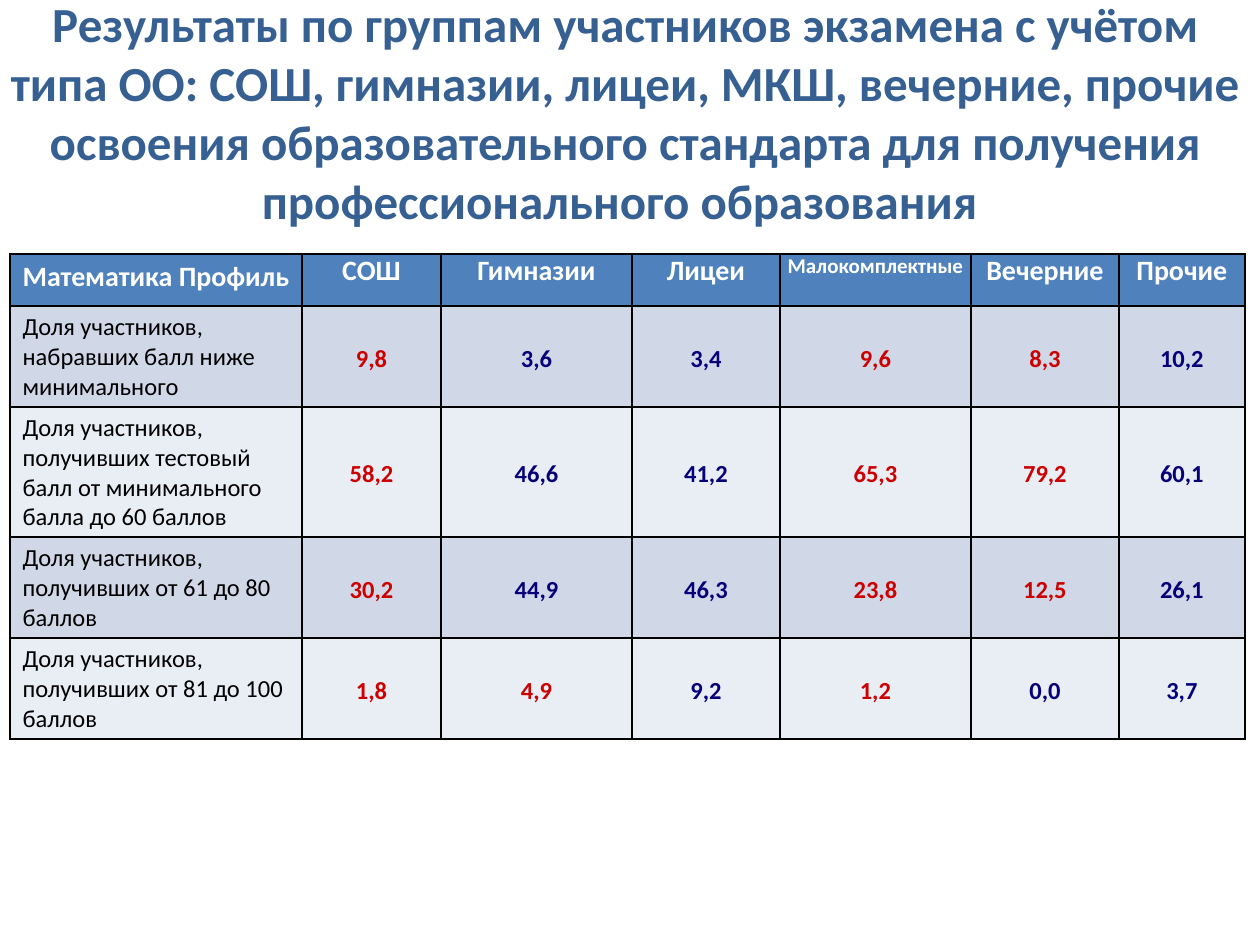
import pptx
import pptx.util
import pptx.dml.color
import pptx.enum.text
import pptx.oxml
import pptx.oxml.ns
from dataclasses import dataclass


@dataclass(frozen=True)
class Theme:
    font: str = "Calibri"
    title: str = "376092"
    header: str = "4F81BD"
    bands: tuple = ("D0D8E8", "E9EDF4")
    white: str = "FFFFFF"
    black: str = "000000"
    red: str = "CC0000"
    blue: str = "070179"
    title_size: int = 28
    header_size: int = 16
    small_size: int = 12
    body_size: int = 14


theme = Theme()
PX = 914400 // 126
ALIGN = pptx.enum.text.PP_ALIGN
MIDDLE = pptx.enum.text.MSO_ANCHOR.MIDDLE


def add_run(p, text, size, color, bold=True):
    r = p.add_run()
    r.text = text
    r.font.name = theme.font
    r.font.size = pptx.util.Pt(size)
    r.font.bold = bold
    r.font.color.rgb = pptx.dml.color.RGBColor.from_string(color)


def style_cell(cell, fill, side=None):
    if side is not None:
        cell.margin_left = cell.margin_right = side * PX
        cell.margin_top = cell.margin_bottom = 0
    pr = cell._tc.get_or_add_tcPr()
    for edge in ("lnL", "lnR", "lnT", "lnB"):
        pr.append(pptx.oxml.parse_xml(
            f'<a:{edge} {pptx.oxml.ns.nsdecls("a")} w="12700"><a:solidFill>'
            f'<a:srgbClr val="{theme.black}"/></a:solidFill></a:{edge}>'))
    cell.fill.solid()
    cell.fill.fore_color.rgb = pptx.dml.color.RGBColor.from_string(fill)


prs = pptx.Presentation()
prs.slide_width, prs.slide_height = 1260 * PX, 945 * PX
s = prs.slides.add_slide(prs.slide_layouts[5])

title = s.shapes.title
title.left, title.top, title.width, title.height = -5 * PX, -14 * PX, 1260 * PX, 251 * PX
tf = title.text_frame
tf.word_wrap = True
tf.auto_size = pptx.enum.text.MSO_AUTO_SIZE.SHAPE_TO_FIT_TEXT
lines = (
    "Результаты по группам участников экзамена с учётом типа ОО: СОШ, гимназии, лицеи, МКШ, вечерние, прочие",
    "освоения образовательного стандарта для получения профессионального образования ",
)
for i, line in enumerate(lines):
    p = tf.add_paragraph() if i else tf.paragraphs[0]
    p.alignment = ALIGN.CENTER
    add_run(p, line, theme.title_size, theme.title)

columns = (
    ("Математика Профиль", 292, None, theme.header_size),
    ("СОШ", 139, 9, theme.header_size),
    ("Гимназии", 191, 9, theme.header_size),
    ("Лицеи", 148, 9, theme.header_size),
    ("Малокомплектные", 191, 0, theme.small_size),
    ("Вечерние", 148, 0, theme.header_size),
    ("Прочие", 126, 9, theme.header_size),
)
rows = (
    ("Доля участников, набравших балл ниже минимального",
     "9,8 3,6 3,4 9,6 8,3 10,2", "RBBRRB"),
    ("Доля участников, получивших тестовый балл от минимального балла до 60 баллов",
     "58,2 46,6 41,2 65,3 79,2 60,1", "RBBRRB"),
    ("Доля участников, получивших от 61 до 80 баллов",
     "30,2 44,9 46,3 23,8 12,5 26,1", "RBBRRB"),
    ("Доля участников, получивших от 81 до 100 баллов",
     "1,8 4,9 9,2 1,2 0,0 3,7", "RRBRBB"),
)
ink = {"R": theme.red, "B": theme.blue}

width = sum(column[1] for column in columns)
table = s.shapes.add_table(len(rows) + 1, len(columns), 10 * PX, 254 * PX, width * PX, 260 * PX).table
for row in table.rows:
    row.height = 52 * PX

for i, (name, col_width, side, size) in enumerate(columns):
    table.columns[i].width = col_width * PX
    cell = table.cell(0, i)
    style_cell(cell, theme.header, side)
    p = cell.text_frame.paragraphs[0]
    p.alignment = ALIGN.CENTER
    add_run(p, name, size, theme.white)

for i, (label, values, marks) in enumerate(rows):
    band = theme.bands[i % 2]
    cell = table.cell(i + 1, 0)
    style_cell(cell, band)
    add_run(cell.text_frame.paragraphs[0], label, theme.body_size, theme.black, False)
    for j, (value, mark) in enumerate(zip(values.split(), marks), 1):
        cell = table.cell(i + 1, j)
        style_cell(cell, band, 9)
        cell.vertical_anchor = MIDDLE
        p = cell.text_frame.paragraphs[0]
        p.alignment = ALIGN.CENTER
        p.line_spacing = 1.15
        add_run(p, value, theme.body_size, ink[mark])

prs.save("out.pptx")
